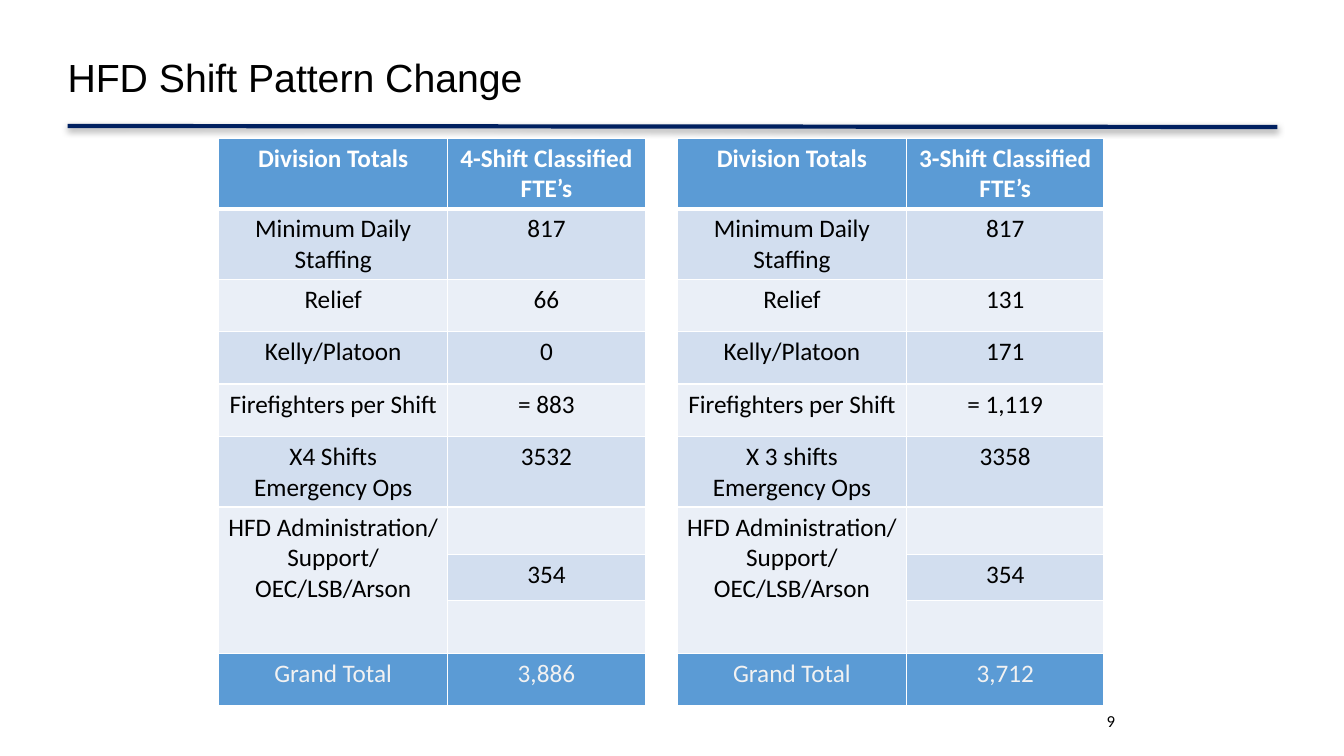
import pptx
import pptx.util
import pptx.dml.color
import pptx.enum.shapes
import pptx.enum.text
import pptx.oxml
import pptx.oxml.ns

# Content: each row is (label lines, 4-shift value, 3-shift value)
TITLE = "HFD Shift Pattern Change"
PAGE_NUMBER = "9"
ROWS = [
    (["Division Totals"], "4-Shift Classified FTE’s", "3-Shift Classified FTE’s"),
    (["Minimum Daily Staffing"], "817", "817"),
    (["Relief"], "66", "131"),
    (["Kelly/Platoon"], "0", "171"),
    (["Firefighters per Shift"], "= 883", "= 1,119"),
    (["{shifts}", "Emergency Ops"], "3532", "3358"),
    (["HFD Administration/ Support/", "OEC/LSB/Arson"], "", ""),
    ([], "354", "354"),
    ([], "", ""),
    (["Grand Total"], "3,886", "3,712"),
]
# Each table: left edge, value column in ROWS, wording of the shift multiplier
TABLES = [(2.17, 1, "X4 Shifts"), (6.72, 2, "X 3 shifts")]

# Grid, in inches
TABLE_TOP = 1.37
COLUMN_WIDTHS = [2.27, 1.96]
ROW_HEIGHTS = [0.52] * 6 + [0.47, 0.46] + [0.52] * 2
MERGED_ROWS = (6, 8)
LAST_ROW = len(ROWS) - 1

BLUE, BAND_DARK, BAND_LIGHT = "5B9BD5", "D2DEEF", "EAEFF7"
WHITE, OFF_WHITE, BLACK, NAVY = "FFFFFF", "F2F2F2", "000000", "002060"

inches = pptx.util.Inches
align = pptx.enum.text.PP_ALIGN


def color(hex_string):
    return pptx.dml.color.RGBColor.from_string(hex_string)


def write(paragraph, text, size, font_name, hex_string, alignment, bold=False):
    paragraph.alignment = alignment
    run = paragraph.add_run()
    run.text = text
    run.font.size = pptx.util.Pt(size)
    run.font.name = font_name
    run.font.bold = bold
    run.font.color.rgb = color(hex_string)


def add_text_box(slide, left, top, width, height):
    box = slide.shapes.add_textbox(inches(left), inches(top), inches(width), inches(height))
    box.text_frame.word_wrap = True
    return box.text_frame


def set_borders(cell, top, bottom):
    properties = cell._tc.get_or_add_tcPr()
    sides = [("lnL", 1), ("lnR", 1), ("lnT", top), ("lnB", bottom)]
    for position, (side, points) in enumerate(sides):
        properties.insert(position, pptx.oxml.parse_xml(
            f'<a:{side} {pptx.oxml.ns.nsdecls("a")} w="{pptx.util.Pt(points)}">'
            f'<a:solidFill><a:srgbClr val="{WHITE}"/></a:solidFill></a:{side}>'))


def style_cell(cell, row):
    if row in (0, LAST_ROW):
        fill = BLUE
    else:
        fill = BAND_DARK if row % 2 else BAND_LIGHT
    cell.fill.solid()
    cell.fill.fore_color.rgb = color(fill)
    cell.margin_left = cell.margin_right = inches(0.06)
    cell.margin_top = cell.margin_bottom = inches(0.05)
    set_borders(cell, top=3 if row == 1 else 1, bottom=3 if row == 0 else 1)


def fill_cell(cell, lines, row):
    text_color = {0: WHITE, LAST_ROW: OFF_WHITE}.get(row, BLACK)
    for index, line in enumerate(lines):
        frame = cell.text_frame
        paragraph = frame.add_paragraph() if index else frame.paragraphs[0]
        write(paragraph, line, 18, "Calibri", text_color, align.CENTER, bold=row == 0)


def add_staffing_table(slide, left, value_column, shifts):
    table = slide.shapes.add_table(
        len(ROWS), len(COLUMN_WIDTHS), inches(left), inches(TABLE_TOP),
        inches(sum(COLUMN_WIDTHS)), inches(sum(ROW_HEIGHTS))).table
    for column, width in zip(table.columns, COLUMN_WIDTHS):
        column.width = inches(width)
    for row, content in enumerate(ROWS):
        table.rows[row].height = inches(ROW_HEIGHTS[row])
        labels = [line.format(shifts=shifts) for line in content[0]]
        value = content[value_column]
        for column, lines in enumerate([labels, [value] if value else []]):
            cell = table.cell(row, column)
            style_cell(cell, row)
            fill_cell(cell, lines, row)
    first, last = MERGED_ROWS
    table.cell(first, 0).merge(table.cell(last, 0))


def add_title_rule(slide):
    rule = slide.shapes.add_connector(
        pptx.enum.shapes.MSO_CONNECTOR.STRAIGHT,
        inches(0.67), inches(1.25), inches(12.67), inches(1.26))
    rule.line.color.rgb = color(NAVY)
    rule.line.width = pptx.util.Pt(3)
    rule._element.spPr.append(pptx.oxml.parse_xml(
        f'<a:effectLst {pptx.oxml.ns.nsdecls("a")}>'
        f'<a:outerShdw blurRad="{pptx.util.Pt(5)}" dist="{pptx.util.Pt(1.6)}" '
        f'dir="5400000" rotWithShape="0"><a:srgbClr val="{BLACK}">'
        '<a:alpha val="38000"/></a:srgbClr></a:outerShdw></a:effectLst>'))


def main():
    presentation = pptx.Presentation()
    presentation.slide_width = inches(13.33)
    presentation.slide_height = inches(7.5)
    slide = presentation.slides.add_slide(presentation.slide_layouts[6])

    # Title and rule
    add_title_rule(slide)
    title = add_text_box(slide, 0.67, 0.33, 9.15, 0.92)
    title.margin_left = title.margin_right = title.margin_top = title.margin_bottom = 0
    title.vertical_anchor = pptx.enum.text.MSO_ANCHOR.MIDDLE
    title.paragraphs[0].line_spacing = 0.9
    write(title.paragraphs[0], TITLE, 28, "Arial", BLACK, align.LEFT)

    # Staffing tables
    for left, value_column, shifts in TABLES:
        add_staffing_table(slide, left, value_column, shifts)

    # Page number
    number = add_text_box(slide, 8.83, 7, 2.33, 0.4)
    write(number.paragraphs[0], PAGE_NUMBER, 12, "Calibri", BLACK, align.RIGHT)

    presentation.save("out.pptx")


if __name__ == "__main__":
    main()
